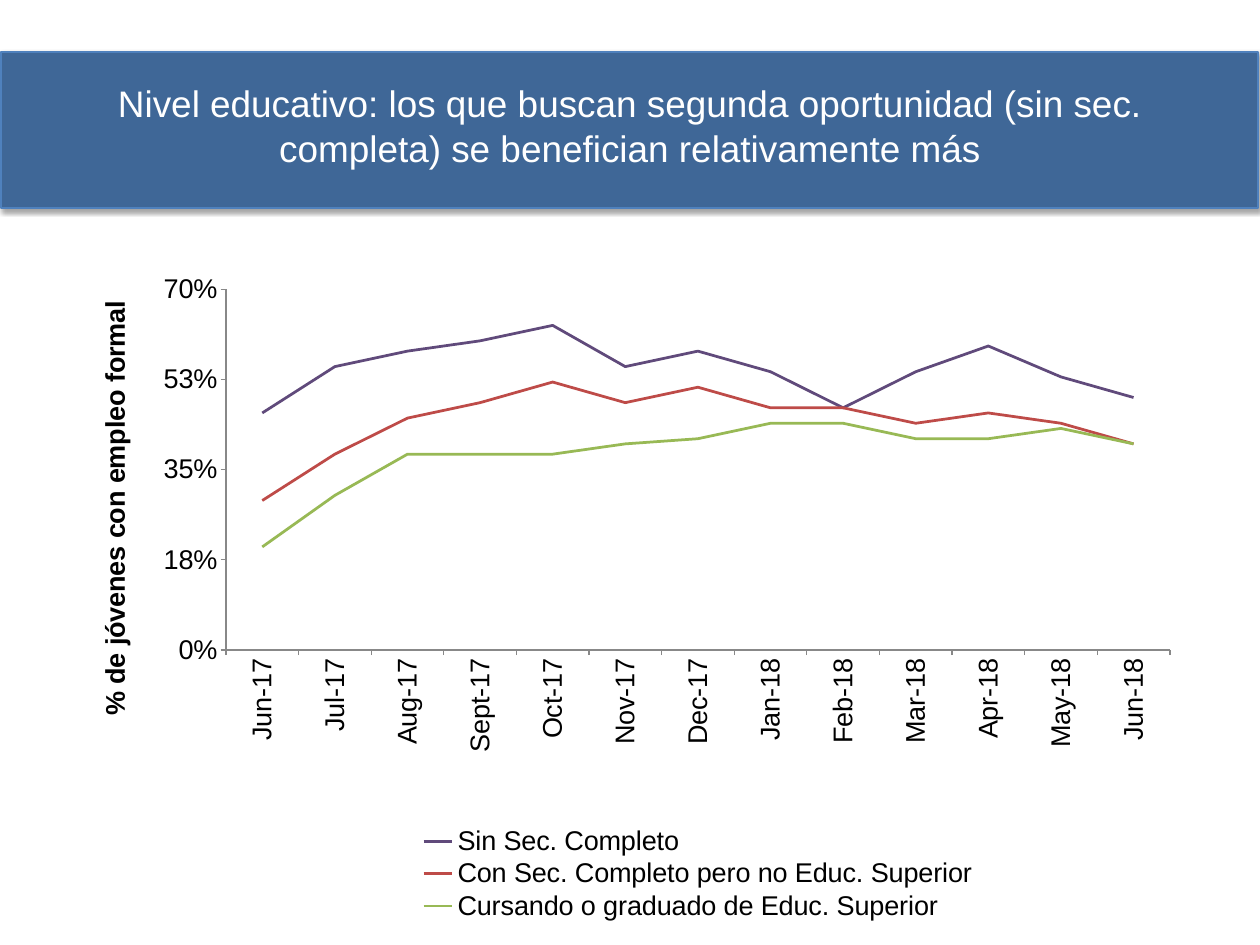
"""Builds a slide with a line chart of formal employment by education level."""
from lxml.etree import SubElement
from pptx import Presentation
from pptx.chart.data import CategoryChartData
from pptx.dml.color import RGBColor
from pptx.enum.chart import XL_CHART_TYPE as ChartType, XL_LEGEND_POSITION as LegendPos
from pptx.enum.chart import XL_MARKER_STYLE as Marker
from pptx.enum.chart import XL_TICK_LABEL_POSITION as LabelPos, XL_TICK_MARK as Tick
from pptx.enum.shapes import MSO_SHAPE as Shape
from pptx.enum.text import MSO_ANCHOR as Anchor, PP_ALIGN as Align
from pptx.oxml import parse_xml
from pptx.oxml.ns import nsdecls, qn
from pptx.util import Inches, Pt

BANNER = RGBColor(0x3F, 0x67, 0x97)
BORDER = RGBColor(0x4F, 0x81, 0xBD)
WHITE = RGBColor(0xFF, 0xFF, 0xFF)
BLACK = RGBColor(0, 0, 0)
AXIS = RGBColor(0x88, 0x88, 0x88)
PURPLE = RGBColor(0x60, 0x4A, 0x7B)
RED = RGBColor(0xBE, 0x4B, 0x48)
GREEN = RGBColor(0x98, 0xB9, 0x55)
FONT = "Arial"

MONTHS = ["Jun-17", "Jul-17", "Aug-17", "Sept-17", "Oct-17", "Nov-17", "Dec-17",
          "Jan-18", "Feb-18", "Mar-18", "Apr-18", "May-18", "Jun-18"]
LEVELS = [
    ("Sin Sec. Completo", PURPLE,
     [0.46, 0.55, 0.58, 0.6, 0.63, 0.55, 0.58, 0.54, 0.47, 0.54, 0.59, 0.53, 0.49]),
    ("Con Sec. Completo pero no Educ. Superior", RED,
     [0.29, 0.38, 0.45, 0.48, 0.52, 0.48, 0.51, 0.47, 0.47, 0.44, 0.46, 0.44, 0.4]),
    ("Cursando o graduado de Educ. Superior", GREEN,
     [0.2, 0.3, 0.38, 0.38, 0.38, 0.4, 0.41, 0.44, 0.44, 0.41, 0.41, 0.43, 0.4]),
]


def write(tf, text, size=22, color=BLACK, bold=False, align=Align.CENTER):
    p = tf.paragraphs[0]
    p.alignment = align
    r = p.add_run()
    r.text = text
    r.font.name, r.font.size, r.font.bold = FONT, Pt(size), bold
    r.font.color.rgb = color


def set_layout(element, index, **values):
    for old in element.findall(qn("c:layout")):
        element.remove(old)
    layout = parse_xml(f"<c:layout {nsdecls('c')}><c:manualLayout/></c:layout>")
    for tag, value in values.items():
        SubElement(layout[0], qn(f"c:{tag}"), val=str(value))
    element.insert(index, layout)


prs = Presentation()
prs.slide_width, prs.slide_height = Inches(14.22), Inches(10.67)
s = prs.slides.add_slide(prs.slide_layouts[6])

banner = s.shapes.add_shape(Shape.RECTANGLE, Inches(0.01), Inches(0.59), Inches(14.19), Inches(1.76))
banner.fill.solid()
banner.fill.fore_color.rgb = BANNER
banner.line.color.rgb = BORDER
banner.line.width = Pt(2)
banner.shadow.inherit = False
banner.element.spPr.find(qn("a:effectLst")).append(parse_xml(
    f'<a:outerShdw {nsdecls("a")} blurRad="{Pt(4)}" dist="{Pt(2)}" dir="5400000" rotWithShape="0">'
    '<a:srgbClr val="000000"><a:alpha val="35000"/></a:srgbClr></a:outerShdw>'))

title = s.shapes.add_textbox(Inches(1.04), Inches(0.75), Inches(12.14), Inches(1.33))
tf = title.text_frame
tf.word_wrap = True
tf.vertical_anchor = Anchor.MIDDLE
tf.margin_left = tf.margin_right = tf.margin_top = tf.margin_bottom = Inches(0.07)
write(tf, "Nivel educativo: los que buscan segunda oportunidad (sin sec. completa) "
      "se benefician relativamente más", size=30, color=WHITE)

data = CategoryChartData(number_format="0%")
data.categories = MONTHS
for name, color, values in LEVELS:
    data.add_series(name, values)
chart = s.shapes.add_chart(ChartType.LINE, Inches(0.67), Inches(2.89),
                           Inches(12.54), Inches(7.54), data).chart
chart.has_title = False
chart.font.name, chart.font.size = FONT, Pt(22)
chart.font.color.rgb = BLACK
chart.plots[0].vary_by_categories = False
for series, (name, color, values) in zip(chart.plots[0].series, LEVELS):
    series.smooth = False
    series.marker.style = Marker.NONE
    series.format.line.color.rgb = color
    series.format.line.width = Pt(2.25)

months, share = chart.category_axis, chart.value_axis
for axis in (months, share):
    axis.has_major_gridlines = False
    axis.major_tick_mark, axis.minor_tick_mark = Tick.OUTSIDE, Tick.NONE
    axis.format.line.color.rgb = AXIS
    axis.format.line.width = Pt(1)
    axis.tick_labels.font.name, axis.tick_labels.font.size = FONT, Pt(22)
    axis.tick_labels.font.color.rgb = BLACK
months.tick_label_position = LabelPos.LOW
share.minimum_scale, share.maximum_scale, share.major_unit = 0, 0.7, 0.175
share.tick_labels.number_format = "0%"
share.tick_labels.number_format_is_linked = False
write(share.axis_title.text_frame, "% de jóvenes con empleo formal", bold=True)
for element in (months._element.find(qn("c:txPr")), share.axis_title._element):
    body = element.xpath(".//a:bodyPr")[0]
    body.set("rot", "-5400000")
    body.set("vert", "horz")

chart.has_legend = True
chart.legend.position = LegendPos.BOTTOM
chart.legend.include_in_layout = True
chart.legend.font.name, chart.legend.font.size = FONT, Pt(22)
chart.legend.font.color.rgb = BLACK

set_layout(chart.element.xpath(".//c:plotArea")[0], 0, layoutTarget="inner",
           xMode="edge", yMode="edge", x=0.15, y=0.05, w=0.85, h=0.54)
set_layout(share.axis_title._element, 1, xMode="edge", yMode="edge", x=0.03, y=0.06)
set_layout(chart.legend._element, 1, xMode="edge", yMode="edge", x=0.3, y=0.85, w=0.55, h=0.15)

prs.save("out.pptx")
